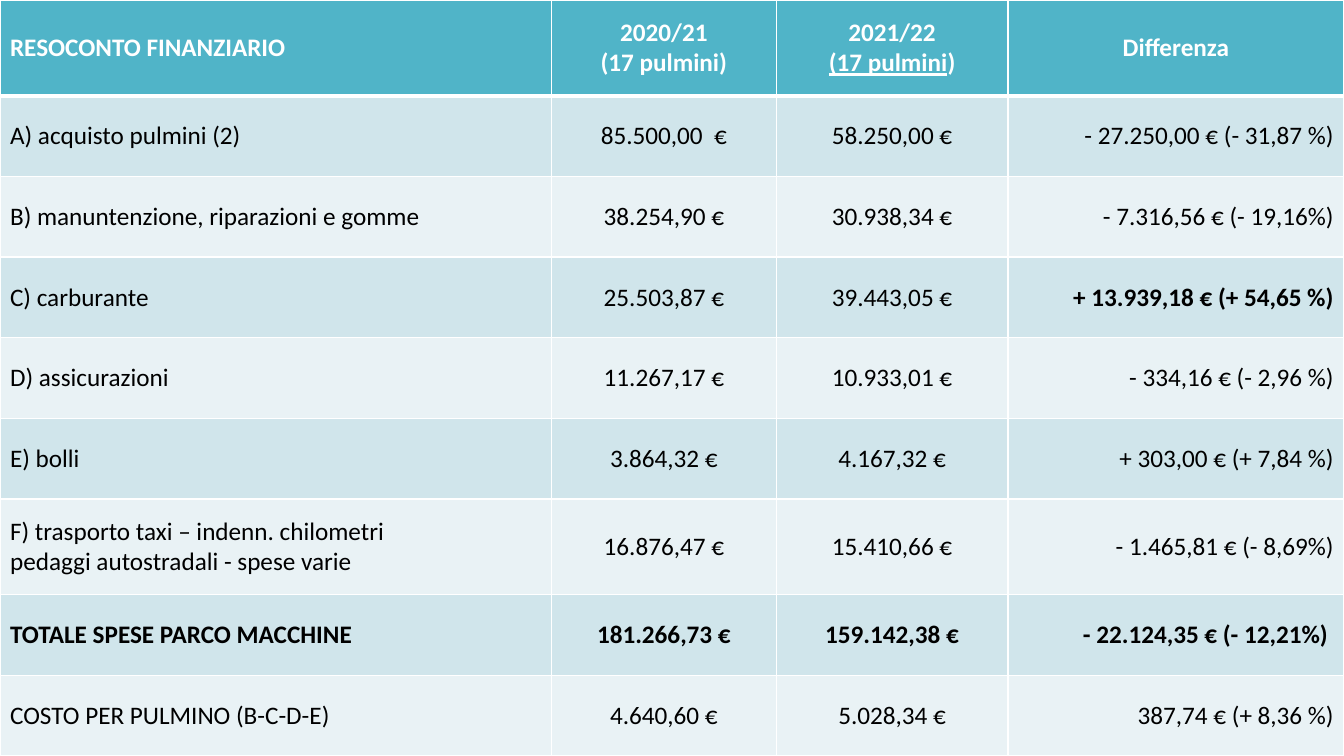
from lxml.etree import SubElement
from pptx import Presentation
from pptx.dml.color import RGBColor
from pptx.enum.text import MSO_ANCHOR, PP_ALIGN
from pptx.oxml.ns import qn
from pptx.util import Pt

WHITE, BLACK = "FFFFFF", "000000"
HEADER_FILL, DARK_BAND, LIGHT_BAND = "50B4C8", "D0E5EB", "E9F2F5"
COLUMN_WIDTHS = [394, 160.5, 165.5, 240]
ROW_HEIGHT, TALL_ROW_HEIGHT = 57.6, 68.4
ALIGNMENTS = [PP_ALIGN.LEFT, PP_ALIGN.CENTER, PP_ALIGN.CENTER, PP_ALIGN.RIGHT]
UNDERLINED = {(0, 2): "(17 pulmini"}
BOLD_CELLS = {(3, 3)}
TOTAL_ROW = 7
REPORT = [
    ["RESOCONTO FINANZIARIO", "2020/21\n(17 pulmini)", "2021/22\n(17 pulmini)", "Differenza"],
    ["A) acquisto pulmini (2)", "85.500,00  €", "58.250,00 €", "- 27.250,00 € (- 31,87 %)"],
    ["B) manuntenzione, riparazioni e gomme", "38.254,90 €", "30.938,34 €", "- 7.316,56 € (- 19,16%)"],
    ["C) carburante", "25.503,87 €", "39.443,05 €", "+ 13.939,18 € (+ 54,65 %)"],
    ["D) assicurazioni", "11.267,17 €", "10.933,01 €", "- 334,16 € (- 2,96 %)"],
    ["E) bolli", "3.864,32 €", "4.167,32 €", "+ 303,00 € (+ 7,84 %)"],
    ["F) trasporto taxi – indenn. chilometri\npedaggi autostradali - spese varie",
     "16.876,47 €", "15.410,66 €", "- 1.465,81 € (- 8,69%)"],
    ["TOTALE SPESE PARCO MACCHINE", "181.266,73 €", "159.142,38 €", "- 22.124,35 € (- 12,21%) "],
    ["COSTO PER PULMINO (B-C-D-E)", "4.640,60 €", "5.028,34 €", "387,74 € (+ 8,36 %)"],
]


def color(value):
    """Return the colour for a hex string."""
    return RGBColor.from_string(value)


def add_run(paragraph, text, size=18, font_color=BLACK, bold=False, underline=False):
    """Add one formatted run to a paragraph."""
    run = paragraph.add_run()
    run.text = text
    run.font.name = "Calibri"
    run.font.size = Pt(size)
    run.font.bold = bold
    run.font.underline = underline
    run.font.color.rgb = color(font_color)


def write_text(cell, text, align=PP_ALIGN.LEFT, underlined=None, **run_format):
    """Write one paragraph per line, underlining the given words."""
    cell.vertical_anchor = MSO_ANCHOR.MIDDLE
    for index, line in enumerate(text.split("\n")):
        frame = cell.text_frame
        paragraph = frame.add_paragraph() if index else frame.paragraphs[0]
        paragraph.alignment = align
        parts = line.partition(underlined) if underlined else [line]
        for part in filter(None, parts):
            add_run(paragraph, part, underline=part == underlined, **run_format)


def set_borders(cell, top=1, bottom=1):
    """Draw white lines on the four sides of a cell."""
    properties = cell._tc.get_or_add_tcPr()
    for side, width in {"L": 1, "R": 1, "T": top, "B": bottom}.items():
        line = SubElement(properties, qn(f"a:ln{side}"), w=str(Pt(width)))
        fill = SubElement(line, qn("a:solidFill"))
        SubElement(fill, qn("a:srgbClr"), val=WHITE)


def set_fill(cell, value):
    """Fill a cell with one colour."""
    cell.fill.solid()
    cell.fill.fore_color.rgb = color(value)


def band_color(row):
    """Return the fill of a table row."""
    if row == 0:
        return HEADER_FILL
    return DARK_BAND if row % 2 else LIGHT_BAND


def add_report_table(slide, width, height):
    """Add the financial report as a table filling the slide."""
    table = slide.shapes.add_table(len(REPORT), len(COLUMN_WIDTHS), 0, 0, width, height).table
    for column, column_width in zip(table.columns, COLUMN_WIDTHS):
        column.width = Pt(column_width)
    for row, texts in enumerate(REPORT):
        is_header = row == 0
        has_two_lines = any("\n" in text for text in texts)
        table.rows[row].height = Pt(TALL_ROW_HEIGHT if has_two_lines else ROW_HEIGHT)
        for column, text in enumerate(texts):
            cell = table.cell(row, column)
            set_borders(cell, top=3 if row == 1 else 1, bottom=3 if is_header else 1)
            set_fill(cell, band_color(row))
            write_text(
                cell, text,
                align=PP_ALIGN.CENTER if is_header and column else ALIGNMENTS[column],
                underlined=UNDERLINED.get((row, column)),
                font_color=WHITE if is_header else BLACK,
                bold=row in (0, TOTAL_ROW) or (row, column) in BOLD_CELLS,
            )


def main():
    """Build the presentation and save it."""
    presentation = Presentation()
    presentation.slide_width, presentation.slide_height = Pt(960), Pt(540)
    slide = presentation.slides.add_slide(presentation.slide_layouts[6])
    add_report_table(slide, presentation.slide_width, presentation.slide_height)
    presentation.save("out.pptx")


if __name__ == "__main__":
    main()
